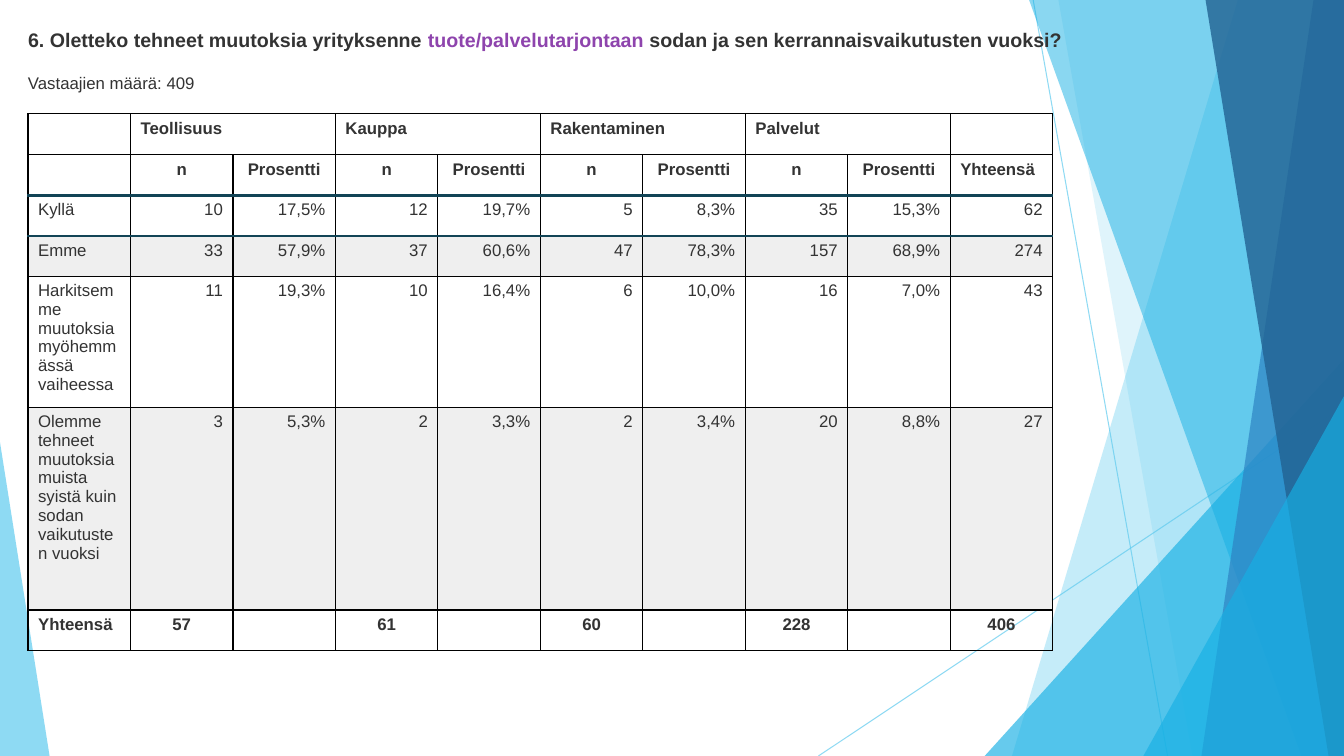
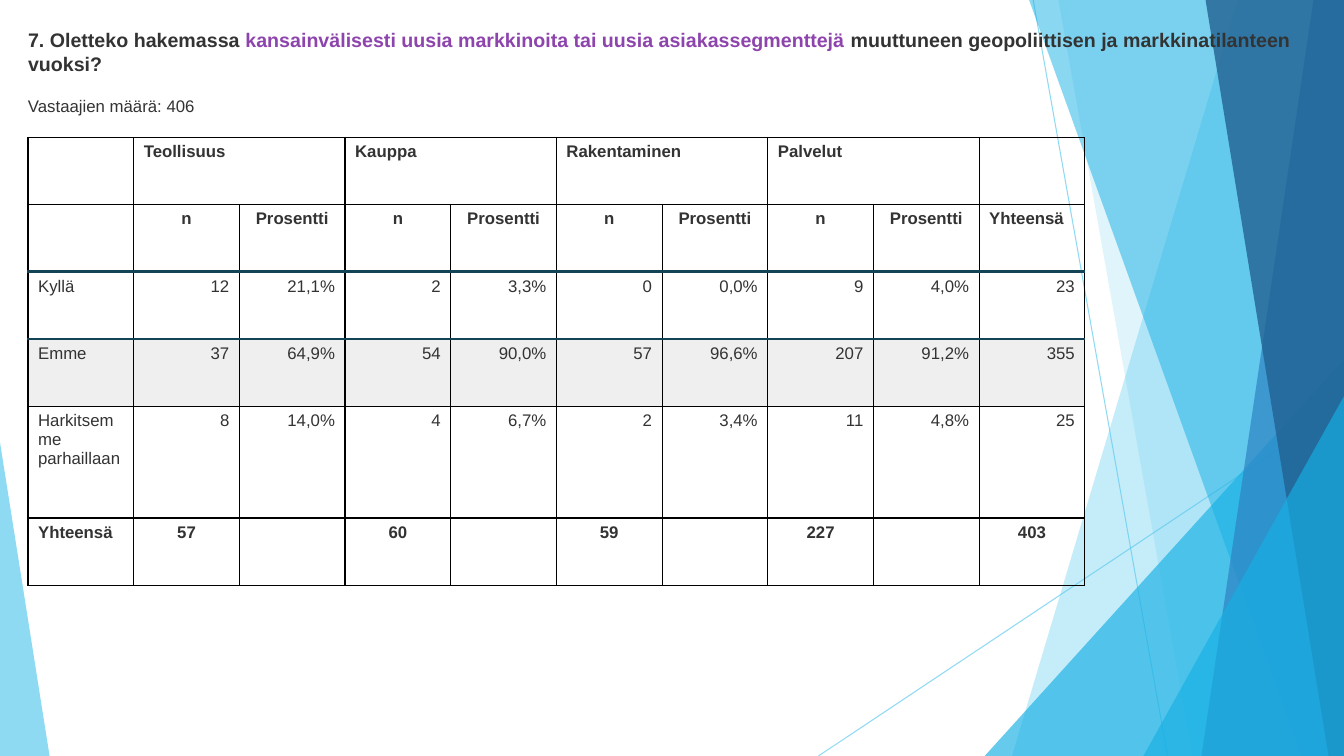
import pptx
import pptx.dml.color
import pptx.enum.shapes
import pptx.enum.text
import pptx.oxml
import pptx.oxml.ns
import pptx.util
from lxml import etree

Pt = pptx.util.Pt
RGBColor = pptx.dml.color.RGBColor
ALIGN = pptx.enum.text.PP_ALIGN
qn = pptx.oxml.ns.qn

INK = RGBColor(0x33, 0x33, 0x33)
PURPLE = RGBColor(0x8E, 0x44, 0xAD)
BLACK = RGBColor(0x00, 0x00, 0x00)
TEAL = RGBColor(0x12, 0x44, 0x56)
STRIPE = RGBColor(0xEF, 0xEF, 0xEF)
SKY = RGBColor(0x5F, 0xCB, 0xEF)
CYAN = RGBColor(0x17, 0xB0, 0xE4)
BLUE = RGBColor(0x2E, 0x83, 0xC3)
NAVY = RGBColor(0x22, 0x62, 0x92)

WIDTH, HEIGHT = 960, 540
MARGIN = 20
TEXT_WIDTH = 920
TITLE_LINE = 16.8


def write(paragraph, text, size=12, color=INK, bold=False, align=ALIGN.LEFT):
    paragraph.alignment = align
    run = paragraph.add_run()
    run.text = text
    run.font.name = "Arial"
    run.font.size = Pt(size)
    run.font.bold = bold
    run.font.color.rgb = color


def set_opacity(shape, percent):
    color = shape.element.xpath("./p:spPr//a:solidFill/a:srgbClr")[0]
    etree.SubElement(color, qn("a:alpha")).set("val", str(percent * 1000))


sectors = ["", "Teollisuus", "", "Kauppa", "", "Rakentaminen", "", "Palvelut", "", ""]
measures = [""] + ["n", "Prosentti"] * 4 + ["Yhteensä"]

questions = [
    {
        "title": ["6. Oletteko tehneet muutoksia yrityksenne ", "tuote/palvelutarjontaan",
                  " sodan ja sen kerrannaisvaikutusten vuoksi?"],
        "title_lines": 1,
        "respondents": "Vastaajien määrä: 409",
        "column_width": 73.2,
        "row_heights": [28.8, 28.8, 28.8, 28.8, 93.6, 144.8, 28.8],
        "answers": [
            ["Kyllä", "10", "17,5%", "12", "19,7%", "5", "8,3%", "35", "15,3%", "62"],
            ["Emme", "33", "57,9%", "37", "60,6%", "47", "78,3%", "157", "68,9%", "274"],
            ["Harkitsemme muutoksia myöhemmässä vaiheessa",
             "11", "19,3%", "10", "16,4%", "6", "10,0%", "16", "7,0%", "43"],
            ["Olemme tehneet muutoksia muista syistä kuin sodan vaikutusten vuoksi",
             "3", "5,3%", "2", "3,3%", "2", "3,4%", "20", "8,8%", "27"],
            ["Yhteensä", "57", "", "61", "", "60", "", "228", "", "406"],
        ],
    },
    {
        "title": ["7. Oletteko hakemassa ",
                  "kansainvälisesti uusia markkinoita tai uusia asiakassegmenttejä",
                  " muuttuneen geopoliittisen ja markkinatilanteen vuoksi?"],
        "title_lines": 2,
        "respondents": "Vastaajien määrä: 406",
        "column_width": 75.5,
        "row_heights": [48, 48, 48, 48, 80, 48],
        "answers": [
            ["Kyllä", "12", "21,1%", "2", "3,3%", "0", "0,0%", "9", "4,0%", "23"],
            ["Emme", "37", "64,9%", "54", "90,0%", "57", "96,6%", "207", "91,2%", "355"],
            ["Harkitsemme parhaillaan",
             "8", "14,0%", "4", "6,7%", "2", "3,4%", "11", "4,8%", "25"],
            ["Yhteensä", "57", "", "60", "", "59", "", "227", "", "403"],
        ],
    },
]

prs = pptx.Presentation()
prs.slide_width, prs.slide_height = Pt(WIDTH), Pt(HEIGHT)
layout = prs.slide_layouts[5]
slides = [prs.slides.add_slide(layout) for question in questions]

shapes = slides[0].shapes
facets = []
for x1, y1, x2, y2 in [(738, 0, 834, HEIGHT), (WIDTH, 290, 584.6, HEIGHT)]:
    ray = shapes.add_connector(pptx.enum.shapes.MSO_CONNECTOR.STRAIGHT,
                               Pt(x1), Pt(y1), Pt(x2), Pt(y2))
    ray.line.color.rgb = SKY
    ray.line.width = Pt(0.75)
    set_opacity(ray, 70)
    etree.SubElement(ray.element.spPr, qn("a:effectLst"))
    facets.append(ray)

bands_and_wedges = [
    ("band", (884.2, 722.9), SKY, 36),
    ("band", (756, 851.8), SKY, 20),
    ("wedge", (703.4, 256.6, 1), CYAN, 66),
    ("band", (735.1, 929.5), CYAN, 50),
    ("band", (938.2, 858.2), BLUE, 70),
    ("band", (861.1, 949), NAVY, 80),
    ("wedge", (816.7, 283, 1), CYAN, 66),
    ("wedge", (0, 316, 0), SKY, 70),
]
for kind, place, color, opacity in bands_and_wedges:
    if kind == "band":
        top_x, bottom_x = place
        outline = shapes.build_freeform(Pt(top_x), 0)
        outline.add_line_segments([(Pt(WIDTH), 0), (Pt(WIDTH), Pt(HEIGHT)),
                                   (Pt(bottom_x), Pt(HEIGHT))])
        facet = outline.convert_to_shape()
    else:
        left, top, apex = place
        right = WIDTH if apex else 35.4
        facet = shapes.add_shape(pptx.enum.shapes.MSO_SHAPE.ISOSCELES_TRIANGLE,
                                 Pt(left), Pt(top), Pt(right - left), Pt(HEIGHT - top))
        facet.adjustments[0] = apex
    facet.fill.solid()
    facet.fill.fore_color.rgb = color
    facet.line.fill.background()
    facet.shadow.inherit = False
    set_opacity(facet, opacity)
    facets.append(facet)

for number, facet in enumerate(facets, 101):
    facet.element.xpath("./*/p:cNvPr")[0].set("id", str(number))
    layout.shapes.element.append(facet.element)

for slide, question in zip(slides, questions):
    title_height = TITLE_LINE * question["title_lines"]
    respondents_top = MARGIN + title_height + 15
    table_top = respondents_top + 29.5

    title = slide.shapes.title
    title.left, title.top = Pt(MARGIN), Pt(MARGIN)
    title.width, title.height = Pt(TEXT_WIDTH), Pt(title_height)
    respondents = slide.shapes.add_textbox(Pt(MARGIN), Pt(respondents_top),
                                           Pt(TEXT_WIDTH), Pt(14.4))
    for frame in (title.text_frame, respondents.text_frame):
        frame.margin_left = frame.margin_top = frame.margin_right = frame.margin_bottom = 0
        frame.word_wrap = True
        frame.auto_size = pptx.enum.text.MSO_AUTO_SIZE.NONE
        frame.vertical_anchor = pptx.enum.text.MSO_ANCHOR.TOP
    for text, color in zip(question["title"], (INK, PURPLE, INK)):
        write(title.text_frame.paragraphs[0], text, size=14, color=color, bold=True)
    write(respondents.text_frame.paragraphs[0], question["respondents"])

    rows = [sectors, measures] + question["answers"]
    heights = question["row_heights"]
    last_row, last_column = len(rows) - 1, len(sectors) - 1
    results = slide.shapes.add_table(
        len(rows), len(sectors), Pt(MARGIN), Pt(table_top),
        Pt(question["column_width"] * len(sectors)), Pt(sum(heights))).table
    results.first_row = results.horz_banding = False
    for column in results.columns:
        column.width = Pt(question["column_width"])
    for row, height in zip(results.rows, heights):
        row.height = Pt(height)
    for first in range(1, last_column, 2):
        results.cell(0, first).merge(results.cell(0, first + 1))

    for r, row in enumerate(rows):
        for c, text in enumerate(row):
            cell = results.cell(r, c)
            properties = cell._tc.get_or_add_tcPr()
            for side in "LRTB":
                teal = (side == "T" and r in (2, 3)) or (side == "B" and r in (1, 2))
                border = etree.SubElement(properties, qn("a:ln" + side))
                border.set("w", str(Pt(2 if teal else 1)))
                fill = etree.SubElement(border, qn("a:solidFill"))
                etree.SubElement(fill, qn("a:srgbClr")).set("val", str(TEAL if teal else BLACK))
            if r in (3, 5) and r < last_row:
                cell.fill.solid()
                cell.fill.fore_color.rgb = STRIPE
            else:
                cell.fill.background()
            if r == 0 or c == 0 or (r == 1 and c == last_column):
                align = ALIGN.LEFT
            elif r in (1, last_row):
                align = ALIGN.CENTER
            else:
                align = ALIGN.RIGHT
            if text:
                write(cell.text_frame.paragraphs[0], text,
                      bold=r in (0, 1, last_row), align=align)

prs.save("out.pptx")
